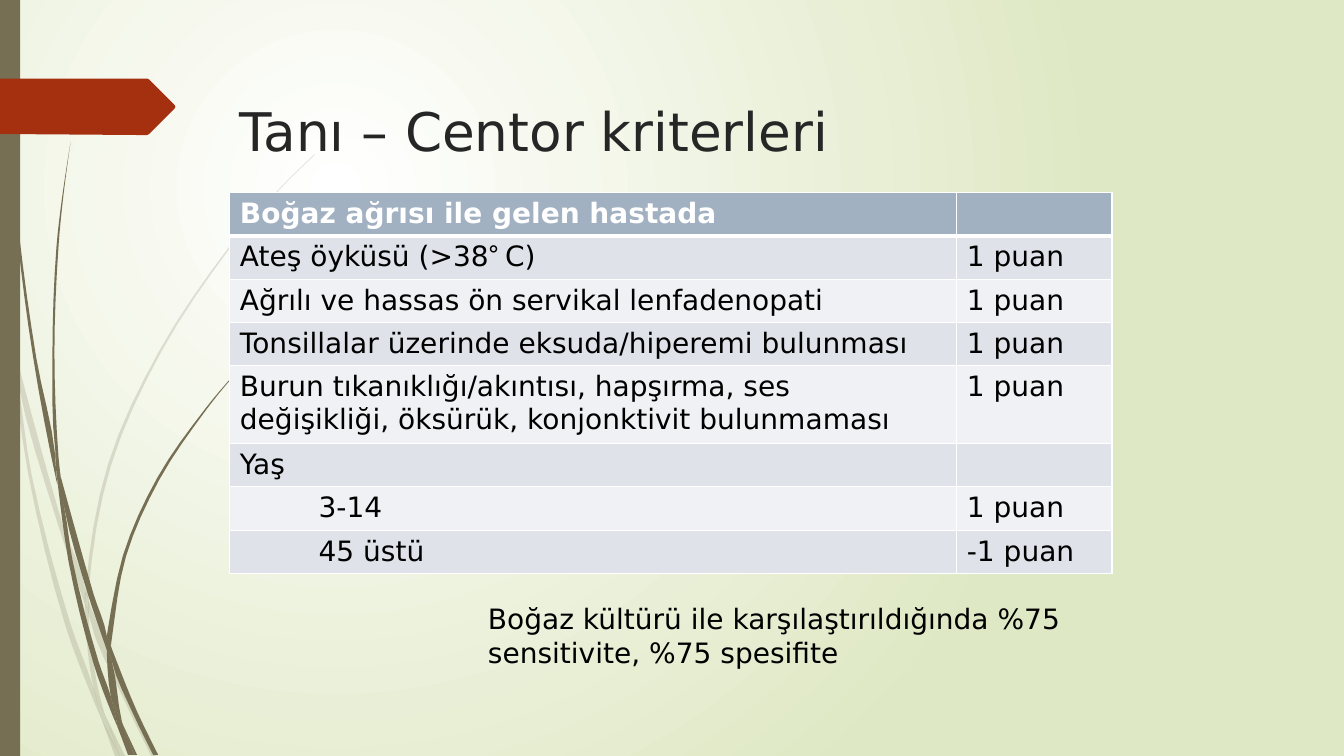
import math
from dataclasses import dataclass

from lxml import etree
from pptx import Presentation
from pptx import util as u
from pptx.dml.color import RGBColor
from pptx.dml.fill import FillFormat
from pptx.enum import shapes, text
from pptx.oxml import ns
from pptx.shapes.autoshape import Shape
from pptx.slide import Slide
from pptx.table import _Cell
from pptx.text.text import TextFrame

Point = tuple[float, float]
Line = list[tuple[str, str]]

FONT = "DejaVu Sans"
OLIVE = "766F54"
WHITE = "FFFFFF"
BLACK = "000000"
HEADER_FILL = "A2B1C1"
BAND_FILLS = ("EFF1F4", "DFE3E9")
CURVE_STEPS = 4


@dataclass(frozen=True)
class Grass:
    opacity: int
    blades: list[list[Point]]


@dataclass(frozen=True)
class Row:
    lines: list[Line]
    score: str
    height: float = 0.43
    indent: float = 0.1


def plain(*lines: str) -> list[Line]:
    return [[(line, FONT)] for line in lines]


PALE_GRASS = Grass(20, [
    [(0.11, 3.5), (0.09, 3.22), (0, 2.82), (0, 2.99), (0.1, 3.44)],
    [(0.58, 5.22), (0.84, 5.99), (0.85, 5.86), (0.62, 5.2), (0.14, 3.45), (0.17, 3.76)],
    [(0.92, 6.07), (0.88, 5.96), (0.88, 6.1), (1.23, 6.94), (1.5, 7.5), (1.55, 7.5), (1.27, 6.92)],
    [(1.19, 7.5), (1.24, 7.5), (1.05, 7.11)],
    [(0.93, 6.83), (0.7, 6.19), (0.31, 4.69), (0.17, 3.76), (0.11, 3.5), (0.28, 4.7),
     (0.65, 6.21), (0.92, 6.93), (1.01, 7.14), (0.99, 7.07)],
    [(0.84, 5.99), (0.87, 6.46), (0.93, 6.83), (0.96, 6.92), (1.05, 7.11), (1.03, 7.06),
     (0.91, 6.46), (0.88, 6.1), (0.88, 6.08)],
    [(0.88, 5.84), (1.1, 4.62), (1.6, 3.49), (2.29, 2.45), (2.68, 1.98), (2.9, 1.75), (3.12, 1.54),
     (3.12, 1.53), (2.89, 1.75), (2.68, 1.97), (2.28, 2.44), (1.58, 3.48), (1.07, 4.61),
     (0.85, 5.84), (0.85, 5.86), (0.88, 5.96)],
    [(1.01, 7.14), (1.14, 7.5), (1.19, 7.5)],
    [(0.88, 6.08), (0.88, 6.1), (0.88, 5.96), (0.85, 5.86), (0.84, 5.99)],
    [(0.96, 6.92), (0.93, 6.83), (0.99, 7.07), (1.01, 7.14), (1.19, 7.5), (1.05, 7.11)],
])
DARK_GRASS = Grass(100, [
    [(0.07, 1.1), (0.17, 2.33), (0.33, 3.55), (0.56, 4.77), (0.57, 4.81), (0.55, 4.57), (0.55, 4.53),
     (0.36, 3.55), (0.19, 2.32), (0.08, 1.09), (0.05, 0.48), (0.04, 0), (0.03, 0), (0.04, 0.48)],
    [(0.88, 5.92), (1.06, 6.45), (1.06, 6.33), (1.06, 6.31), (0.93, 5.9), (0.6, 4.72), (0.64, 5.05)],
    [(1.13, 6.49), (1.1, 6.41), (1.11, 6.56), (1.32, 7.08), (1.52, 7.49), (1.57, 7.49), (1.36, 7.06)],
    [(1.1, 6.91), (0.98, 6.57), (0.72, 5.56), (0.64, 5.05), (0.57, 4.77), (0.68, 5.57),
     (0.93, 6.59), (1.11, 7.08), (1.17, 7.22), (1.16, 7.17)],
    [(0.6, 4.72), (0.58, 4.53), (0.54, 3.49), (0.58, 2.45), (0.63, 1.93), (0.7, 1.41),
     (0.62, 1.93), (0.56, 2.45), (0.52, 3.49), (0.55, 4.49)],
    [(1.33, 7.49), (1.36, 7.49), (1.22, 7.19)],
    [(0.57, 4.77), (0.64, 5.05), (0.6, 4.72), (0.55, 4.49), (0.55, 4.53)],
    [(1.11, 6.33), (1.25, 5.52), (1.58, 4.76), (2.05, 4.06), (2.31, 3.74), (2.45, 3.59), (2.61, 3.44),
     (2.6, 3.44), (2.45, 3.58), (2.31, 3.73), (2.04, 4.05), (1.56, 4.74), (1.22, 5.51),
     (1.06, 6.31), (1.1, 6.41)],
    [(1.17, 7.22), (1.27, 7.49), (1.31, 7.49)],
    [(1.06, 6.45), (1.1, 6.91), (1.16, 7.06), (1.22, 7.19), (1.21, 7.16), (1.11, 6.56), (1.09, 6.51)],
    [(1.06, 6.45), (1.09, 6.51), (1.11, 6.56), (1.1, 6.41), (1.06, 6.31), (1.06, 6.33)],
    [(1.16, 7.06), (1.1, 6.91), (1.16, 7.17), (1.17, 7.22), (1.3, 7.49), (1.33, 7.49), (1.22, 7.19)],
])
ARROW = [(0, 0.78), (1.46, 0.78), (1.48, 0.79), (1.73, 1.04), (1.74, 1.06), (1.73, 1.08),
         (1.48, 1.33), (1.46, 1.34), (1.36, 1.34), (0, 1.33)]

ROWS = [
    Row(plain("Boğaz ağrısı ile gelen hastada"), ""),
    Row([[("Ateş öyküsü (>38", FONT), ("° ", "Karla"), ("C)", FONT)]], "1 puan"),
    Row(plain("Ağrılı ve hassas ön servikal lenfadenopati"), "1 puan"),
    Row(plain("Tonsillalar üzerinde eksuda/hiperemi bulunması"), "1 puan"),
    Row(plain("Burun tıkanıklığı/akıntısı, hapşırma, ses",
              "değişikliği, öksürük, konjonktivit bulunmaması"), "1 puan", height=0.77),
    Row(plain("Yaş"), ""),
    Row(plain("3-14"), "1 puan", indent=0.88),
    Row(plain("45 üstü"), "-1 puan", indent=0.88),
]


def paint(fill: FillFormat, colour: str) -> None:
    fill.solid()
    fill.fore_color.rgb = RGBColor.from_string(colour)


def finish(shape: Shape, colour: str, opacity: int = 100) -> None:
    shape.shadow.inherit = False
    shape.line.fill.background()
    paint(shape.fill, colour)
    if opacity < 100:
        tint = shape.element.spPr.find(".//" + ns.qn("a:srgbClr"))
        etree.SubElement(tint, ns.qn("a:alpha")).set("val", str(opacity * 1000))


def direction(before: Point, point: Point, after: Point) -> Point:
    incoming = math.atan2(point[1] - before[1], point[0] - before[0])
    outgoing = math.atan2(after[1] - point[1], after[0] - point[0])
    turn = math.remainder(outgoing - incoming, math.tau)
    if abs(turn) > math.pi / 6:
        return 0, 0
    return math.cos(incoming + turn / 2), math.sin(incoming + turn / 2)


def smooth(points: list[Point]) -> list[Point]:
    count = len(points)
    headings = [direction(points[i - 1], points[i], points[(i + 1) % count]) for i in range(count)]
    curve = []
    for i, start in enumerate(points):
        following = (i + 1) % count
        end = points[following]
        reach = math.dist(start, end) / 3
        first = [a + reach * h for a, h in zip(start, headings[i])]
        second = [b - reach * h for b, h in zip(end, headings[following])]
        for step in range(CURVE_STEPS):
            t = step / CURVE_STEPS
            x, y = ((1 - t) ** 3 * a + 3 * t * (1 - t) ** 2 * b + 3 * t * t * (1 - t) * c + t ** 3 * d
                    for a, b, c, d in zip(start, first, second, end))
            curve.append((x, y))
    return curve


def draw_outline(container, points: list[Point], colour: str, opacity: int = 100) -> None:
    corners = [(u.Inches(x), u.Inches(y)) for x, y in points]
    builder = container.build_freeform(*corners[0])
    builder.add_line_segments(corners[1:], close=True)
    finish(builder.convert_to_shape(), colour, opacity)


def write(frame: TextFrame, lines: list[Line], size: float, colour: str, bold: bool = False) -> None:
    for index, line in enumerate(lines):
        paragraph = frame.paragraphs[0] if index == 0 else frame.add_paragraph()
        for wording, font_name in line:
            run = paragraph.add_run()
            run.text = wording
            run.font.name = font_name
            run.font.size = u.Pt(size)
            run.font.bold = bold
            paint(run.font.fill, colour)


def add_text(slide: Slide, box: tuple[float, ...], lines: list[Line], size: float, colour: str) -> None:
    frame = slide.shapes.add_textbox(*map(u.Inches, box)).text_frame
    frame.word_wrap = True
    frame.margin_left = frame.margin_right = frame.margin_bottom = 0
    frame.margin_top = u.Inches(0.01)
    frame.vertical_anchor = text.MSO_ANCHOR.MIDDLE
    write(frame, lines, size, colour)


def add_borders(cell: _Cell, row_index: int) -> None:
    widths = {"L": 1, "R": 1, "T": 3 if row_index == 1 else 1, "B": 3 if row_index == 0 else 1}
    properties = cell._tc.get_or_add_tcPr()
    for side, width in widths.items():
        border = etree.SubElement(properties, ns.qn(f"a:ln{side}"), w=str(u.Pt(width)))
        solid = etree.SubElement(border, ns.qn("a:solidFill"))
        etree.SubElement(solid, ns.qn("a:srgbClr"), val=WHITE)


def add_criteria(slide: Slide) -> None:
    height = sum(row.height for row in ROWS)
    table = slide.shapes.add_table(len(ROWS), 2, *map(u.Inches, (2.28, 1.91, 8.75, height))).table
    for column, width in zip(table.columns, (7.21, 1.54)):
        column.width = u.Inches(width)
    for index, row in enumerate(ROWS):
        table.rows[index].height = u.Inches(row.height)
        header = index == 0
        contents = [(row.lines, row.indent), (plain(row.score) if row.score else [], 0.1)]
        for column, (lines, indent) in enumerate(contents):
            cell = table.cell(index, column)
            cell.margin_left = u.Inches(indent)
            cell.margin_right = cell.margin_bottom = 0
            cell.margin_top = u.Inches(0.05)
            add_borders(cell, index)
            paint(cell.fill, HEADER_FILL if header else BAND_FILLS[index % 2])
            write(cell.text_frame, lines, 20, WHITE if header else BLACK, header)


def add_background(slide: Slide) -> None:
    fill = slide.background.fill
    fill.gradient()
    for stop, colour in zip(fill.gradient_stops, (WHITE, "DFE8C4")):
        stop.color.rgb = RGBColor.from_string(colour)
    gradient = slide.element.find(".//" + ns.qn("a:gradFill"))
    gradient.remove(gradient.find(ns.qn("a:lin")))
    circle = etree.SubElement(gradient, ns.qn("a:path"), {"path": "circle"})
    etree.SubElement(circle, ns.qn("a:fillToRect"), l="50000", t="50000", r="100000", b="100000")


def main() -> None:
    presentation = Presentation()
    presentation.slide_width, presentation.slide_height = u.Inches(13.33), u.Inches(7.5)
    slide = presentation.slides.add_slide(presentation.slide_layouts[6])
    add_background(slide)
    for grass in (PALE_GRASS, DARK_GRASS):
        group = slide.shapes.add_group_shape()
        for blade in grass.blades:
            draw_outline(group.shapes, smooth(blade), OLIVE, grass.opacity)
    bar = slide.shapes.add_shape(shapes.MSO_SHAPE.RECTANGLE, 0, 0, u.Inches(0.2), u.Inches(7.5))
    finish(bar, OLIVE)
    draw_outline(slide.shapes, ARROW, "A53010")
    add_text(slide, (2.38, 0.96, 6.07, 0.66), plain("Tanı – Centor kriterleri"), 38, "262626")
    add_criteria(slide)
    add_text(slide, (4.84, 5.95, 5.76, 0.7),
             plain("Boğaz kültürü ile karşılaştırıldığında %75", "sensitivite, %75 spesifite"), 20, BLACK)
    presentation.save("out.pptx")


if __name__ == "__main__":
    main()
